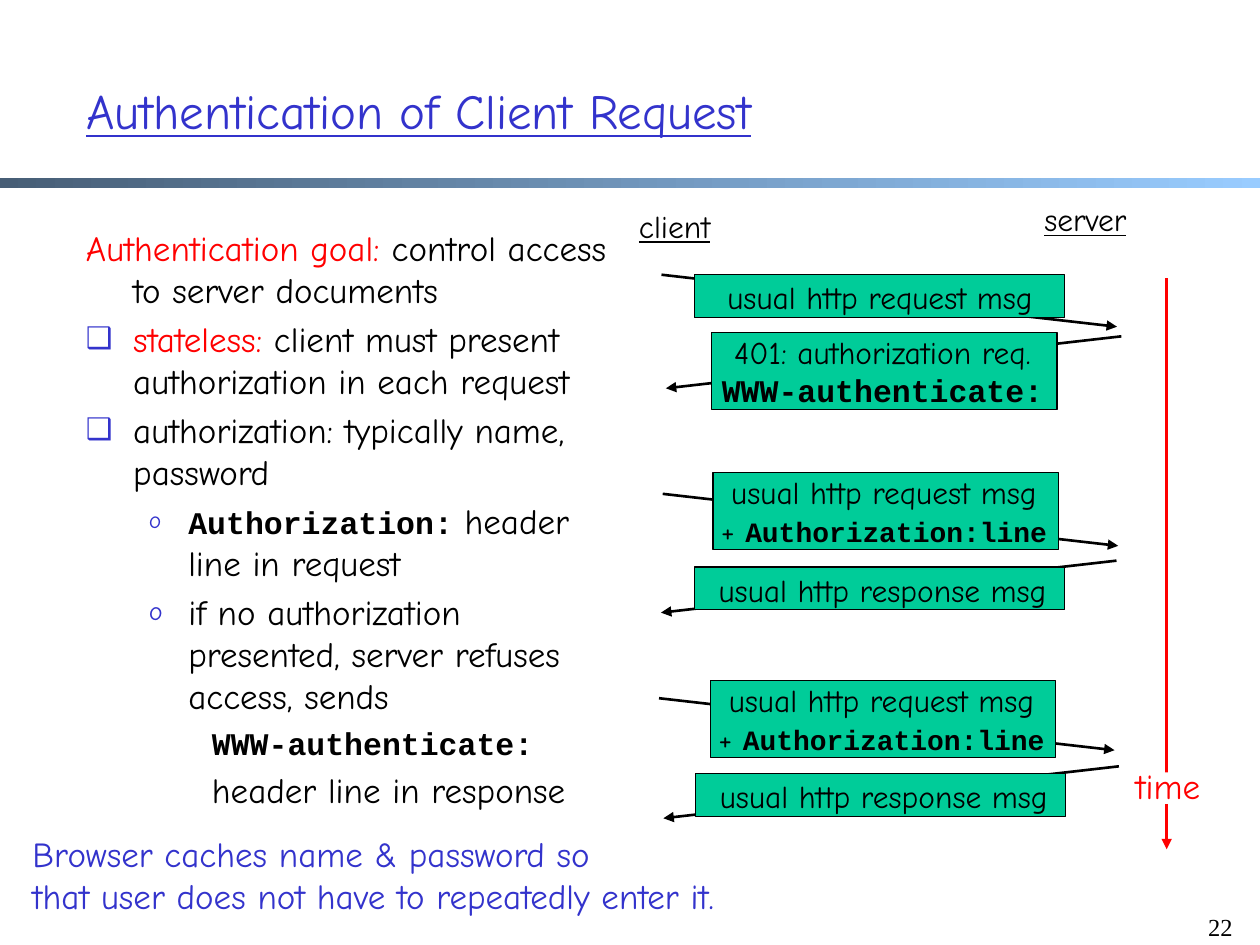
from dataclasses import dataclass
from lxml.etree import SubElement
from pptx import Presentation
from pptx.dml.color import RGBColor
from pptx.enum.shapes import MSO_CONNECTOR, MSO_SHAPE
from pptx.enum.text import MSO_ANCHOR, PP_ALIGN
from pptx.oxml.ns import qn
from pptx.util import Pt


@dataclass(frozen=True)
class Theme:
    ink: str = "000000"
    blue: str = "3333CC"
    red: str = "FF0000"
    green: str = "00CC99"
    white: str = "FFFFFF"
    dark: str = "475E76"
    light: str = "99CCFF"
    sans: str = "Comic Neue"
    mono: str = "Courier New"
    serif: str = "Times New Roman"
    head: int = 28
    body: int = 20
    label: int = 18
    code: int = 16
    foot: int = 14


@dataclass(frozen=True)
class Run:
    text: str
    size: int
    color: str = Theme.ink
    font: str = Theme.sans
    bold: bool = False
    under: bool = False


def code(text, size=Theme.label):
    return Run(text, size, font=Theme.mono, bold=True)


class Page:
    def __init__(self, slide, theme):
        self.slide, self.theme = slide, theme

    def add_runs(self, para, runs):
        for item in runs:
            run = para.add_run()
            run.text = item.text
            font = run.font
            font.name, font.size = item.font, Pt(item.size)
            font.bold, font.underline = item.bold, item.under
            font.color.rgb = RGBColor.from_string(item.color)

    def title(self, text, *area):
        box = self.slide.shapes.title
        box.left, box.top, box.width, box.height = map(Pt, area)
        frame = box.text_frame
        frame.vertical_anchor = MSO_ANCHOR.MIDDLE
        para = frame.paragraphs[0]
        para.alignment = PP_ALIGN.LEFT
        self.add_runs(para, [Run(text, self.theme.head, self.theme.blue, under=True)])

    def text(self, area, lines, align=PP_ALIGN.CENTER, wrap=True):
        """Add a text box, one list of runs per line, and return its paragraphs."""
        frame = self.slide.shapes.add_textbox(*map(Pt, area)).text_frame
        frame.word_wrap = wrap
        for i, runs in enumerate(lines):
            para = frame.add_paragraph() if i else frame.paragraphs[0]
            para.alignment = align
            self.add_runs(para, runs)
        return frame.paragraphs

    def indent(self, para, left, hang, mark=None, scale=100):
        """Set a hanging indent, with a bullet if a mark is given."""
        para.space_before = Pt(4)
        props = para._p.get_or_add_pPr()
        props.set("marL", str(Pt(left)))
        props.set("indent", str(-Pt(hang)))
        if not mark:
            SubElement(props, qn("a:buNone"))
            return
        color = SubElement(props, qn("a:buClr"))
        SubElement(color, qn("a:srgbClr"), val=self.theme.blue)
        SubElement(props, qn("a:buSzPct"), val=str(scale * 1000))
        SubElement(props, qn("a:buFont"), typeface=self.theme.sans)
        SubElement(props, qn("a:buChar"), char=mark)

    def rect(self, area, fill, edge=None):
        box = self.slide.shapes.add_shape(MSO_SHAPE.RECTANGLE, *map(Pt, area))
        box.shadow.inherit = False
        box.fill.solid()
        box.fill.fore_color.rgb = RGBColor.from_string(fill)
        if edge:
            box.line.color.rgb = RGBColor.from_string(edge)
            box.line.width = Pt(0.75)
        else:
            box.line.fill.background()
        return box

    def band(self, area, *colors):
        fill = self.rect(area, colors[0]).fill
        fill.gradient()
        fill.gradient_angle = 0
        for stop, color in zip(fill.gradient_stops, colors):
            stop.color.rgb = RGBColor.from_string(color)

    def arrow(self, start, end, color):
        line = self.slide.shapes.add_connector(
            MSO_CONNECTOR.STRAIGHT, *map(Pt, (*start, *end)))
        line.line.color.rgb = RGBColor.from_string(color)
        line.line.width = Pt(1.5)
        props = line._element.spPr
        SubElement(props.find(qn("a:ln")), qn("a:tailEnd"), type="triangle")
        SubElement(props, qn("a:effectLst"))

    def message(self, start, way, box, left, width, lines):
        """Draw an arrow (way 1 to the server, -1 back) and its label box."""
        x, y = start
        self.arrow(start, (x + way * 260.3, y + 29.7), self.theme.ink)
        wide, high, lift, tall = (
            (211.7, 24.5, 1.4, 28.8) if len(lines) == 1
            else (197.3, 44, 3.2, 50.4))
        self.rect((*box, wide, high), self.theme.green, self.theme.ink)
        self.text((left, box[1] - lift, width, tall), lines)


def main():
    deck = Presentation()
    deck.slide_width, deck.slide_height = Pt(720), Pt(540)
    look = Theme()
    page = Page(deck.slides.add_slide(deck.slide_layouts[5]), look)

    page.band((0, 101.7, 720, 6), look.dark, look.light)
    page.text((675.4, 517.7, 36, 36),
              [[Run("22", look.foot, font=look.serif)]], PP_ALIGN.RIGHT)
    page.title("Authentication of Client Request", 42, 18, 612, 90)

    size = look.body
    plain = (27, 27)
    box = (27, 27, "❑", 85)
    ring = (58.5, 22.5, "o", 75)
    deep = (90, 18)
    points = [
        (plain, [Run("Authentication goal:", size, look.red),
                 Run(" control access to server documents", size)]),
        (box, [Run("stateless:", size, look.red),
               Run(" client must present authorization in each request", size)]),
        (box, [Run("authorization: typically name, password", size)]),
        (ring, [code("Authorization:"), Run(" header line in request", size)]),
        (ring, [Run("if no authorization presented, server refuses access, sends",
                    size)]),
        (deep, [code("WWW-authenticate:")]),
        (deep, [Run("header line in response", size)]),
    ]
    paras = page.text((42, 126, 322, 339), [runs for _, runs in points],
                      PP_ALIGN.LEFT)
    for para, (style, _) in zip(paras, points):
        page.indent(para, *style)

    for name, area in (("client", (347, 114.5, 77, 36)),
                       ("server", (576.7, 110.9, 87, 36))):
        page.text(area, [[Run(name, look.label, under=True)]], wrap=False)

    ask = [Run("usual http request msg", look.label)]
    reply = [Run("usual http response msg", look.label)]
    deny = [Run("401: authorization req.", look.label)]
    proof = [Run("+ ", look.label), code("Authorization:line", look.code)]
    for step in (
        ((378, 157), 1, (396.7, 157), 397.4, 211, [ask]),
        ((640.8, 192.2), -1, (406.8, 190), 400.3, 208,
         [deny, [code("WWW-authenticate:")]]),
        ((378.7, 282.2), 1, (407.5, 270), 399.6, 211, [ask, proof]),
        ((638, 320.4), -1, (396.7, 324), 395.3, 218, [reply]),
        ((376.6, 399), 1, (406, 388.8), 398.2, 211, [ask, proof]),
        ((639.4, 437.9), -1, (397.4, 442), 396, 218, [reply]),
    ):
        page.message(*step)

    page.arrow((666.7, 159), (666.7, 485.3), look.red)
    page.rect((645.8, 441.4, 44.6, 18), look.white)
    page.text((639.4, 433.4, 56, 31), [[Run("time", size, look.red)]], wrap=False)

    page.text((11.5, 472.3, 451.4, 55.4),
              [[Run("Browser caches name & password so", size, look.blue)],
               [Run("that user does not have to repeatedly enter it.",
                    size, look.blue)]],
              PP_ALIGN.LEFT, wrap=False)
    deck.save("out.pptx")


if __name__ == "__main__":
    main()
